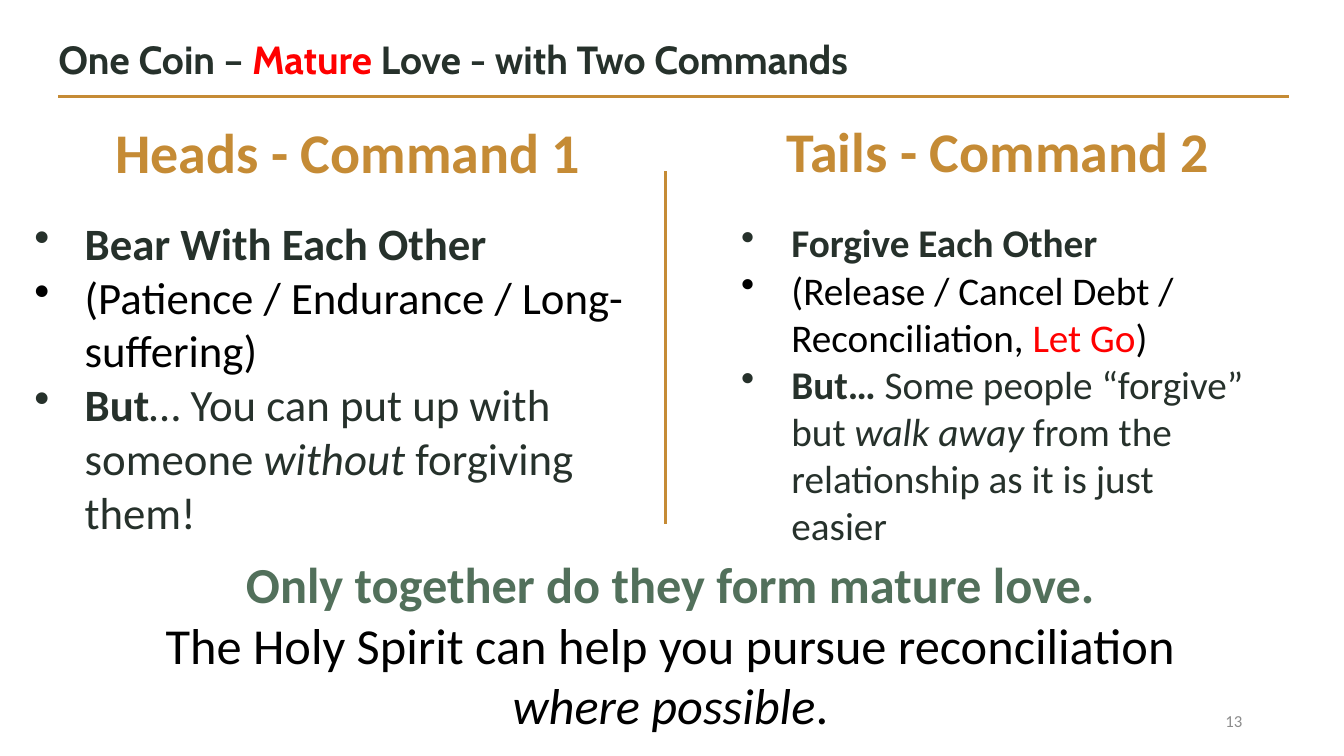
from dataclasses import dataclass

import pptx
import pptx.dml.color
import pptx.enum.shapes
import pptx.enum.text
import pptx.oxml.ns
import pptx.util
from lxml import etree

ALIGN = pptx.enum.text.PP_ALIGN
INCHES = pptx.util.Inches


@dataclass(frozen=True)
class Theme:
    """Colours, fonts and type sizes of the slide."""
    ink: str = "26312B"
    black: str = "000000"
    red: str = "FF0000"
    gold: str = "C58B35"
    green: str = "52705B"
    grey: str = "8C8C8C"
    title_font: str = "Cabin"
    body_font: str = "Calibri"
    title: int = 28
    heading: int = 40
    heads_points: int = 32
    tails_points: int = 28
    closing: int = 36
    number: int = 12


@dataclass(frozen=True)
class Span:
    """A stretch of text in one style."""
    text: str
    color: str
    bold: bool = False
    italic: bool = False


THEME = Theme()
WIDTH, HEIGHT = 13.33, 7.5
MARGIN = 0.58
HEADING_WIDTH, HEADING_HEIGHT = 4.9, 0.4
BULLET_INDENT = 0.5


def add_bullet(paragraph):
    """Give the paragraph a hanging round bullet."""
    properties = paragraph._p.get_or_add_pPr()
    indent = INCHES(BULLET_INDENT)
    properties.set("marL", str(indent))
    properties.set("indent", str(-indent))
    etree.SubElement(properties, pptx.oxml.ns.qn("a:buChar"), char="•")


def style_font(font, span, fields):
    """Apply the named style fields of a span to a font."""
    if "color" in fields:
        font.color.rgb = pptx.dml.color.RGBColor.from_string(span.color)
    if "bold" in fields:
        font.bold = span.bold
    if "italic" in fields:
        font.italic = span.italic


def write_paragraph(paragraph, spans, size, face, align, bullet):
    """Write spans, styling the paragraph where they agree and runs elsewhere."""
    paragraph.alignment = align
    if bullet:
        add_bullet(paragraph)
    paragraph.font.name = face
    paragraph.font.size = pptx.util.Pt(size)
    fields = ("color", "bold", "italic")
    shared = [f for f in fields if len({getattr(s, f) for s in spans}) == 1]
    varied = [f for f in fields if f not in shared]
    style_font(paragraph.font, spans[0], shared)
    for span in spans:
        run = paragraph.add_run()
        run.text = span.text
        style_font(run.font, span, varied)


def fill_frame(frame, paragraphs, size, face=THEME.body_font, align=ALIGN.LEFT,
               bullet=False, inset=0):
    """Fill a vertically centred text frame with paragraphs of spans."""
    frame.word_wrap = True
    frame.auto_size = pptx.enum.text.MSO_AUTO_SIZE.NONE
    frame.vertical_anchor = pptx.enum.text.MSO_ANCHOR.MIDDLE
    frame.margin_left = frame.margin_right = INCHES(inset)
    frame.margin_top = frame.margin_bottom = INCHES(inset / 2)
    for index, spans in enumerate(paragraphs):
        paragraph = frame.add_paragraph() if index else frame.paragraphs[0]
        write_paragraph(paragraph, spans, size, face, align, bullet)


def add_text(slide, box, paragraphs, size, **options):
    """Add a text box in the given box."""
    text = slide.shapes.add_textbox(*map(INCHES, box))
    fill_frame(text.text_frame, paragraphs, size, **options)


def add_rule(slide, start, end, weight):
    """Draw a gold line between two points."""
    rule = slide.shapes.add_connector(
        pptx.enum.shapes.MSO_CONNECTOR.STRAIGHT, *map(INCHES, start + end))
    rule.line.color.rgb = pptx.dml.color.RGBColor.from_string(THEME.gold)
    rule.line.width = pptx.util.Pt(weight)
    etree.SubElement(rule._element.spPr, pptx.oxml.ns.qn("a:effectLst"))


def build_header(slide, box):
    """Place the slide title and the rule beneath it."""
    left, top, width, height = box
    title = slide.shapes.title
    title.left, title.top, title.width, title.height = map(INCHES, box)
    spans = [Span("One Coin – ", THEME.ink, True),
             Span("Mature", THEME.red, True),
             Span(" Love - with Two Commands", THEME.ink, True)]
    fill_frame(title.text_frame, [spans], THEME.title, face=THEME.title_font)
    rule_top = top + height + 0.14
    add_rule(slide, (left, rule_top), (left + width, rule_top), 1.8)


def build_command(slide, box, heading, heading_offset, points, size):
    """Place a command's bullet points and its heading, offset from the box."""
    left, top = box[:2]
    across, down = heading_offset
    add_text(slide, (left + across, top + down, HEADING_WIDTH, HEADING_HEIGHT),
             [[Span(heading, THEME.gold, True)]], THEME.heading, align=ALIGN.CENTER)
    add_text(slide, box, points, size, bullet=True)


def build_closing(slide, box):
    """Place the closing statement."""
    add_text(slide, box, [
        [Span("Only together do they form mature love.", THEME.green, True)],
        [Span("The Holy Spirit can help you pursue reconciliation ", THEME.black),
         Span("where possible", THEME.black, italic=True),
         Span(".", THEME.black)],
    ], THEME.closing, align=ALIGN.CENTER)


def build_number(slide, box):
    """Place the slide number."""
    add_text(slide, box, [[Span("13", THEME.grey)]], THEME.number,
             align=ALIGN.RIGHT, inset=0.1)


def main():
    """Build the slide and save it."""
    deck = pptx.Presentation()
    deck.slide_width, deck.slide_height = INCHES(WIDTH), INCHES(HEIGHT)
    slide = deck.slides.add_slide(deck.slide_layouts.get_by_name("Title Only"))

    heads_points = [
        [Span("Bear With Each Other", THEME.ink, True)],
        [Span("(Patience / Endurance / Long-suffering)", THEME.black)],
        [Span("But", THEME.ink, True),
         Span("… You can put up with someone ", THEME.ink),
         Span("without", THEME.ink, italic=True),
         Span(" forgiving them!", THEME.ink)],
    ]
    tails_points = [
        [Span("Forgive Each Other", THEME.ink, True)],
        [Span("(Release / Cancel Debt / Reconciliation, ", THEME.black),
         Span("Let Go", THEME.red),
         Span(")", THEME.black)],
        [Span("But… ", THEME.ink, True),
         Span("Some people “forgive” but ", THEME.ink),
         Span("walk away ", THEME.ink, italic=True),
         Span("from the relationship as it is just easier", THEME.ink)],
    ]

    build_header(slide, (MARGIN, 0.34, 12.2, 0.48))
    build_command(slide, (0.34, 2.14, 5.93, 3.2), "Heads - Command 1",
                  (0.66, -0.84), heads_points, THEME.heads_points)
    build_command(slide, (7.35, 1.54, 5.1, 4.53), "Tails - Command 2",
                  (0.1, -0.25), tails_points, THEME.tails_points)
    add_rule(slide, (6.6, 1.7), (6.6, 5.2), 2)
    build_closing(slide, (1.1, 5.64, 11.1, 1.5))
    build_number(slide, (9.42, 6.95, 3, 0.4))
    deck.save("out.pptx")


if __name__ == "__main__":
    main()
